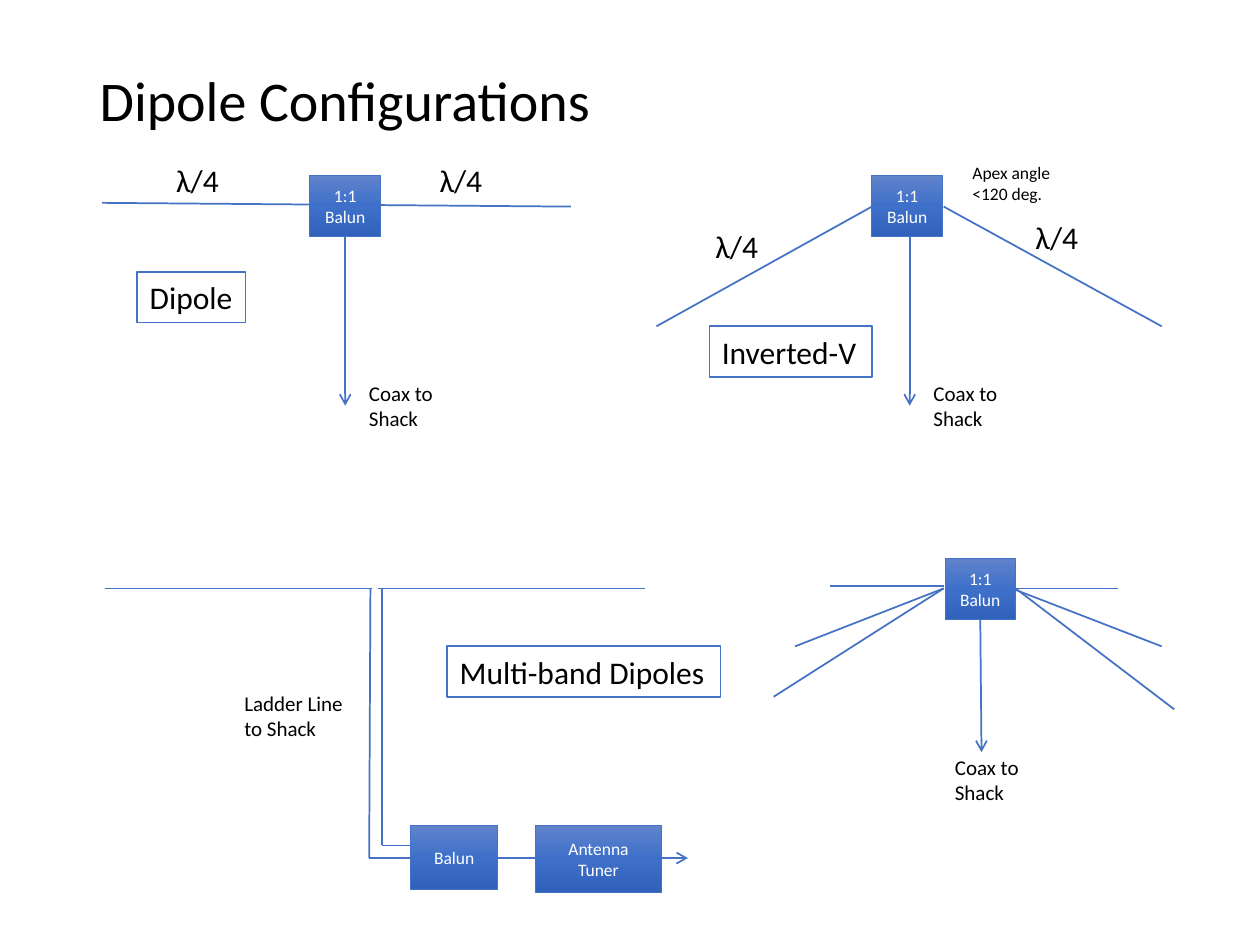
import copy

import lxml.etree
import pptx
import pptx.dml.color
import pptx.enum.shapes
import pptx.enum.text
import pptx.oxml.ns
import pptx.util

BLUE = pptx.dml.color.RGBColor(0x44, 0x72, 0xC4)
BLACK = pptx.dml.color.RGBColor(0, 0, 0)
WHITE = pptx.dml.color.RGBColor(255, 255, 255)
GRADIENT = [
    (0, pptx.dml.color.RGBColor(0x61, 0x83, 0xCB)),
    (0.5, pptx.dml.color.RGBColor(0x3E, 0x70, 0xCA)),
    (1, pptx.dml.color.RGBColor(0x30, 0x62, 0xBB)),
]
qn = pptx.oxml.ns.qn

deck = pptx.Presentation()
deck.slide_width = pptx.util.Inches(10)
deck.slide_height = pptx.util.Inches(7.5)
page = deck.slides.add_slide(deck.slide_layouts[5])

# Grid of 100 columns by 75 rows
COLUMN = deck.slide_width / 100
ROW = deck.slide_height / 75


def place(*numbers):
    """Turn alternating columns and rows into slide lengths."""
    return [round(n * (ROW if i % 2 else COLUMN)) for i, n in enumerate(numbers)]


def write(shape, text, size, color, **frame_format):
    frame = shape.text_frame
    frame.text = text
    for name, value in frame_format.items():
        setattr(frame, name, value)
    for para in frame.paragraphs:
        for span in para.runs:
            span.font.color.rgb = color
            for name, value in {"name": "Calibri", "size": pptx.util.Pt(size)}.items():
                setattr(span.font, name, value)


# Title
title = page.shapes.title
for name, value in zip(("left", "top", "width", "height"), place(6.9, 4, 86.2, 8.4)):
    setattr(title, name, value)
write(title, "Dipole Configurations", 32, BLACK,
      vertical_anchor=pptx.enum.text.MSO_ANCHOR.MIDDLE)
title.text_frame.paragraphs[0].alignment = pptx.enum.text.PP_ALIGN.LEFT
title.text_frame.paragraphs[0].line_spacing = 0.9

# Wires (from column, row to column, row) and feed lines with an arrowhead
wires = [
    # Dipole
    (8.1, 16.1, 45.3, 16.4),
    # Inverted-V
    (69.2, 16.4, 52.1, 25.9), (74.9, 16.4, 92.2, 25.9),
    # Ladder line dipole, down to balun and tuner
    (8.3, 46.7, 29.5, 46.7), (30, 46.7, 51.2, 46.7),
    (29.4, 46.7, 29.3, 68.1), (30.3, 46.7, 30.3, 67.1),
    (29.3, 68.1, 42.5, 68.1), (30.3, 67.1, 32.7, 67.1),
    # Fan dipole
    (74.9, 46.5, 65.9, 46.5), (74.9, 46.7, 63.1, 51.3), (74.9, 46.7, 61.4, 55.3),
    (80.6, 46.7, 88.7, 46.7), (80.3, 46.7, 92.2, 51.3), (80.6, 46.7, 93.2, 56.3),
]
feeds = [
    (27.4, 18.8, 27.4, 32.2), (72.2, 18.8, 72.2, 32.2),
    (77.8, 49.2, 77.9, 59.7), (52.5, 68.1, 54.6, 68.1),
]
for ends in wires + feeds:
    wire = page.shapes.add_connector(
        pptx.enum.shapes.MSO_CONNECTOR.STRAIGHT, *place(*ends))
    wire.line.color.rgb = BLUE
    wire.line.width = pptx.util.Pt(1)
    if ends in feeds:
        lxml.etree.SubElement(wire.line._get_or_add_ln(), qn("a:tailEnd"), type="arrow")
    lxml.etree.SubElement(wire._element.spPr, qn("a:effectLst"))

# Gradient component boxes
components = [
    ("1:1 Balun", 24.6, 13.9, 5.6, 4.9),
    ("1:1 Balun", 69.2, 13.9, 5.6, 4.9),
    ("1:1 Balun", 75, 44.3, 5.6, 4.9),
    ("Balun", 32.6, 65.5, 6.9, 5.1),
    ("Antenna Tuner", 42.5, 65.5, 10, 5.3),
]
for text, *spot in components:
    box = page.shapes.add_shape(pptx.enum.shapes.MSO_SHAPE.RECTANGLE, *place(*spot))
    box.shadow.inherit = False
    box.line.color.rgb = BLUE
    box.line.width = pptx.util.Pt(0.5)
    box.fill.gradient()
    box.fill.gradient_angle = 270
    stop_list = box._element.spPr.find(".//" + qn("a:gsLst"))
    stop_list.append(copy.deepcopy(stop_list[-1]))
    for stop, (position, color) in zip(box.fill.gradient_stops, GRADIENT):
        stop.position = position
        stop.color.rgb = color
    write(box, text, 10, WHITE, word_wrap=True,
          vertical_anchor=pptx.enum.text.MSO_ANCHOR.MIDDLE)
    box.text_frame.paragraphs[0].alignment = pptx.enum.text.PP_ALIGN.CENTER

# Framed names, then plain labels: text, size, place
names = [
    ("Dipole", 18, 10.9, 21.6, 8.6, 4),
    ("Inverted-V", 18, 56.3, 25.9, 12.9, 4),
    ("Multi-band Dipoles", 18, 35.5, 51.3, 21.7, 4),
]
labels = [
    ("Apex angle\n<120 deg.", 10, 76.2, 12.4, 8.3, 4.4),
    ("Ladder Line\nto Shack", 12, 18.4, 54.3, 9.9, 5),
]
for left, top in [(13, 12.3), (33.9, 12.3), (55.8, 17.5), (81.2, 16.8)]:
    labels.append(("λ/4", 18, left, top, 5.7, 4))
for left, top in [(28.3, 29.7), (73.1, 29.7), (74.8, 59.4)]:
    labels.append(("Coax to\nShack", 12, left, top, 7.2, 5))
for label in names + labels:
    text, size, *spot = label
    box = page.shapes.add_textbox(*place(*spot))
    write(box, text, size, BLACK, word_wrap=False,
          auto_size=pptx.enum.text.MSO_AUTO_SIZE.SHAPE_TO_FIT_TEXT)
    if label in names:
        box.fill.solid()
        box.fill.fore_color.rgb = WHITE
        box.line.color.rgb = BLUE
        box.line.width = pptx.util.Pt(1)

deck.save("out.pptx")
